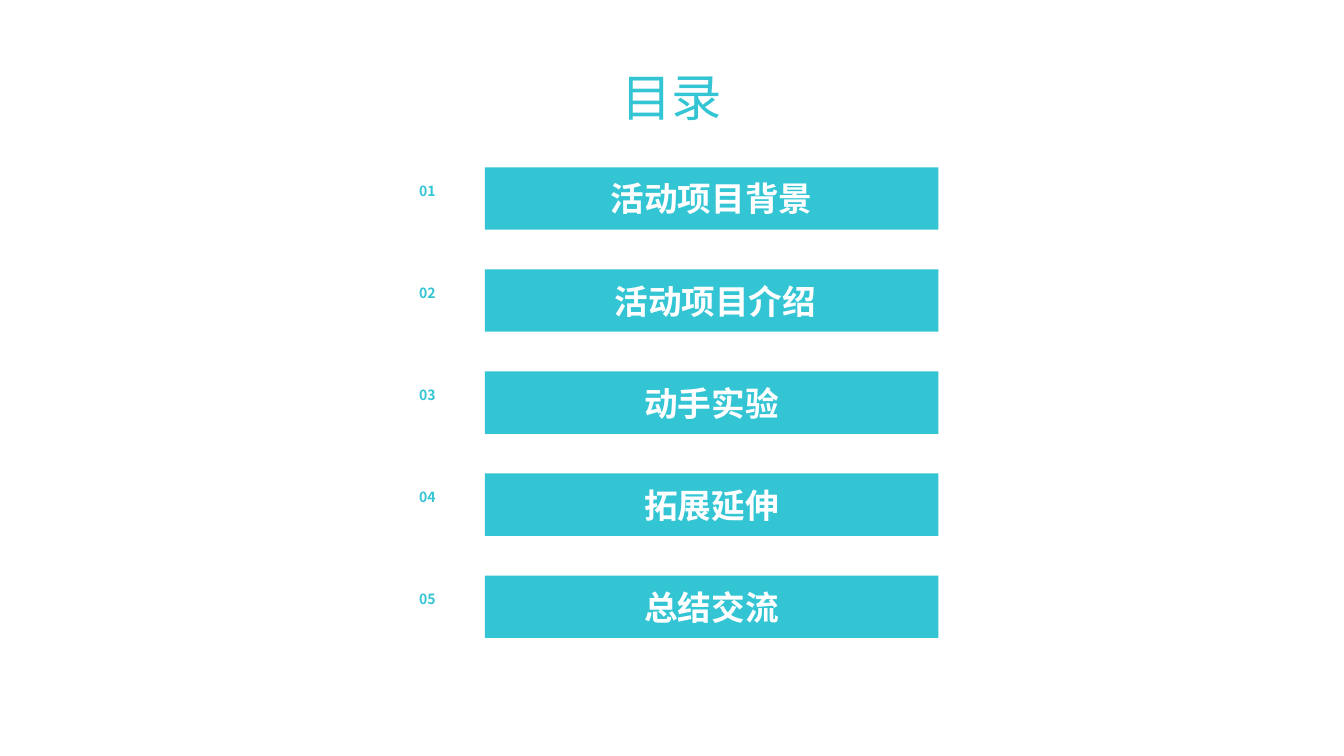
from lxml import etree
from pptx import Presentation
from pptx.dml.color import RGBColor
from pptx.enum.shapes import MSO_SHAPE
from pptx.enum.text import MSO_ANCHOR, MSO_AUTO_SIZE, PP_ALIGN
from pptx.oxml.ns import qn
from pptx.util import Pt

TEAL = RGBColor(0x34, 0xC5, 0xD4)
WHITE = RGBColor(0xFF, 0xFF, 0xFF)
RECTANGLE = MSO_SHAPE.RECTANGLE
TOP, MIDDLE = MSO_ANCHOR.TOP, MSO_ANCHOR.MIDDLE
LEFT, CENTER = PP_ALIGN.LEFT, PP_ALIGN.CENTER
NO_AUTOFIT = MSO_AUTO_SIZE.NONE
TITLE_ONLY = 5

CHAPTERS = ["活动项目背景", " 活动项目介绍", "动手实验", "拓展延伸", "总结交流"]
FIRST_TOP, PITCH = 119.5, 72.9


class ContentsSlide:
    heading_font = "Arial"
    body_font = "Noto Sans CJK SC"

    def __init__(self, deck):
        self.slide = deck.slides.add_slide(deck.slide_layouts[TITLE_ONLY])

    def set_text(self, shape, text, size, color, font, align, anchor, bold=False):
        frame = shape.text_frame
        frame.text = text
        frame.word_wrap = True
        frame.auto_size = NO_AUTOFIT
        frame.vertical_anchor = anchor
        paragraph = frame.paragraphs[0]
        paragraph.alignment = align
        for run in paragraph.runs:
            run.font.size = Pt(size)
            run.font.bold = bold
            run.font.color.rgb = color
            run.font.name = font
            # East Asian characters take their own typeface
            properties = run._r.get_or_add_rPr()
            etree.SubElement(properties, qn("a:ea")).set("typeface", font)
        return paragraph

    def title(self, text, left, top, width, height):
        heading = self.slide.shapes.title
        heading.left, heading.top = Pt(left), Pt(top)
        heading.width, heading.height = Pt(width), Pt(height)
        paragraph = self.set_text(
            heading, text, 36, TEAL, self.heading_font, CENTER, TOP)
        paragraph.line_spacing = 1.3

    def number(self, text, left, top, width, height):
        label = self.slide.shapes.add_textbox(Pt(left), Pt(top), Pt(width), Pt(height))
        self.set_text(label, text, 10, TEAL, self.body_font, LEFT, TOP, bold=True)

    def bar(self, text, left, top, width, height):
        bar = self.slide.shapes.add_shape(
            RECTANGLE, Pt(left), Pt(top), Pt(width), Pt(height))
        bar.shadow.inherit = False
        bar.fill.solid()
        bar.fill.fore_color.rgb = TEAL
        bar.line.fill.background()
        self.set_text(bar, text, 24, WHITE, self.body_font, CENTER, MIDDLE, bold=True)


def main():
    deck = Presentation()
    deck.slide_width, deck.slide_height = Pt(960), Pt(540)
    contents = ContentsSlide(deck)

    # Heading
    contents.title("目录", 360.7, 31, 238.3, 64)

    # Numbered chapters
    for index, chapter in enumerate(CHAPTERS):
        top = FIRST_TOP + index * PITCH
        contents.number(f"{index + 1:02d}", 292.3, top + 7, 39.6, 31.3)
        contents.bar(chapter, 346.3, top, 324, 44.6)

    deck.save("out.pptx")


if __name__ == "__main__":
    main()
